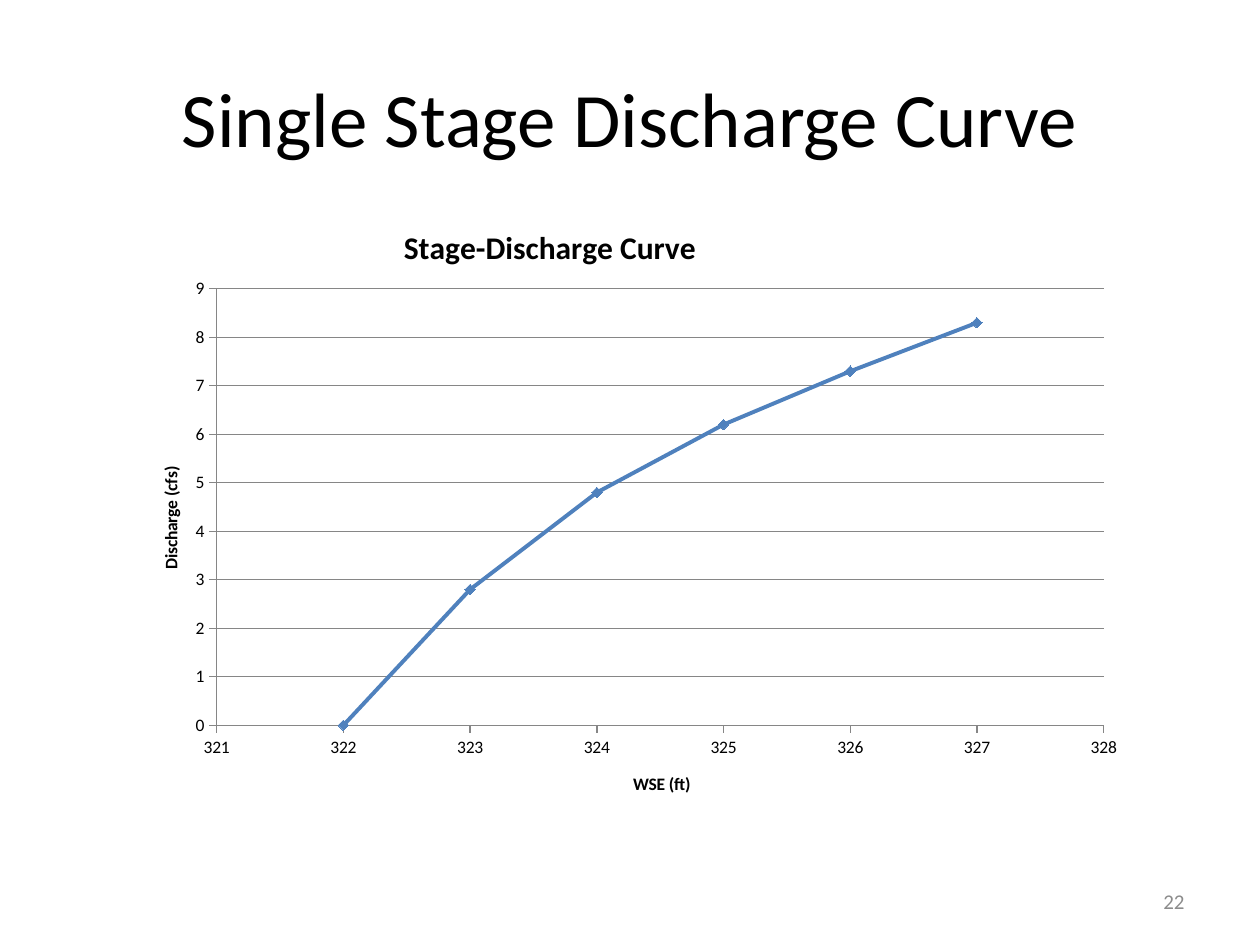
import pptx
import pptx.chart.data
import pptx.dml.color
import pptx.enum.chart
import pptx.enum.text
import pptx.oxml
import pptx.oxml.ns
import pptx.util

FONT = "Calibri"
BLACK, GRAY, BLUE = "000000", "8C8C8C", "4F81BD"
GRID_GRAY = "868686"
WATER_LEVELS = range(322, 328)
DISCHARGES = [0, 2.8, 4.8, 6.2, 7.3, 8.3]


def color(code):
    return pptx.dml.color.RGBColor.from_string(code)


def style_font(font, size, code=BLACK, bold=False):
    font.name = FONT
    font.size = pptx.util.Pt(size)
    font.bold = bold
    font.color.rgb = color(code)


def style_line(line, code, width):
    line.color.rgb = color(code)
    line.width = pptx.util.Pt(width)


def add_text(page, place, text, size, code, align):
    box = page.shapes.add_textbox(*map(pptx.util.Inches, place))
    frame = box.text_frame
    frame.word_wrap = True
    frame.vertical_anchor = pptx.enum.text.MSO_ANCHOR.MIDDLE
    frame.text = text
    para = frame.paragraphs[0]
    para.alignment = align
    style_font(para.runs[0].font, size, code)


def set_layout(element, before, **shares):
    """Place a chart part by shares of the chart's size, ahead of the named child."""
    for old in element.findall(pptx.oxml.ns.qn("c:layout")):
        element.remove(old)
    target = '<c:layoutTarget val="inner"/>' if "w" in shares else ""
    modes = "".join(f'<c:{key}Mode val="edge"/>' for key in "xy")
    values = "".join(f'<c:{key} val="{share}"/>' for key, share in shares.items())
    layout = pptx.oxml.parse_xml(
        f'<c:layout {pptx.oxml.ns.nsdecls("c")}><c:manualLayout>'
        f"{target}{modes}{values}</c:manualLayout></c:layout>")
    element.find(pptx.oxml.ns.qn(before)).addprevious(layout)


def set_title(owner, text, size, x, y):
    """Title a chart or an axis at a share of the chart's size."""
    owner.has_title = True
    title = owner.chart_title if hasattr(owner, "chart_title") else owner.axis_title
    title.text_frame.text = text
    style_font(title.text_frame.paragraphs[0].runs[0].font, size, bold=True)
    element = title._element
    if element.find(pptx.oxml.ns.qn("c:overlay")) is None:
        element.get_or_add_layout()
        element.find(pptx.oxml.ns.qn("c:layout")).addnext(
            pptx.oxml.parse_xml(f'<c:overlay {pptx.oxml.ns.nsdecls("c")} val="0"/>'))
    set_layout(element, "c:overlay", x=x, y=y)


def style_axis(axis, low, high, gridlines):
    axis.minimum_scale, axis.maximum_scale = low, high
    axis.major_unit = 1
    axis.has_major_gridlines = gridlines
    if gridlines:
        style_line(axis.major_gridlines.format.line, GRID_GRAY, 0.75)
    axis.major_tick_mark = pptx.enum.chart.XL_TICK_MARK.OUTSIDE
    axis.minor_tick_mark = pptx.enum.chart.XL_TICK_MARK.NONE
    axis.tick_labels.number_format = "General"
    axis.tick_labels.number_format_is_linked = False
    style_font(axis.tick_labels.font, 10)
    style_line(axis.format.line, GRID_GRAY, 0.75)


def style_curve(curve):
    curve.smooth = True
    style_line(curve.format.line, BLUE, 2.25)
    marker = curve.marker
    marker.style = pptx.enum.chart.XL_MARKER_STYLE.DIAMOND
    marker.size = 6
    marker.format.fill.solid()
    marker.format.fill.fore_color.rgb = color(BLUE)
    style_line(marker.format.line, BLUE, 0.75)


def add_discharge_chart(page, place):
    data = pptx.chart.data.XyChartData()
    series = data.add_series("Series 1")
    for level, discharge in zip(WATER_LEVELS, DISCHARGES):
        series.add_data_point(level, discharge)
    chart = page.shapes.add_chart(
        pptx.enum.chart.XL_CHART_TYPE.XY_SCATTER_SMOOTH,
        *map(pptx.util.Inches, place), data).chart
    style_font(chart.font, 10)
    chart.has_legend = False
    chart.plots[0].vary_by_categories = False
    style_curve(chart.plots[0].series[0])
    style_axis(chart.category_axis, 321, 328, False)
    style_axis(chart.value_axis, 0, 9, True)
    set_title(chart, "Stage-Discharge Curve", 18, 0.27, 0.04)
    set_title(chart.category_axis, "WSE (ft)", 10, 0.5, 0.92)
    set_title(chart.value_axis, "Discharge (cfs)", 10, 0.03, 0.43)
    plot_area = chart._chartSpace.chart.plotArea
    set_layout(plot_area, "c:scatterChart", x=0.09, y=0.15, w=0.88, h=0.7)


def main():
    deck = pptx.Presentation()
    deck.slide_width = pptx.util.Inches(10)
    deck.slide_height = pptx.util.Inches(7.5)
    page = deck.slides.add_slide(deck.slide_layouts[6])
    align = pptx.enum.text.PP_ALIGN
    add_text(page, (0.5, 0.3, 9, 1.25), "Single Stage Discharge Curve", 44, BLACK, align.CENTER)
    add_text(page, (7.17, 6.95, 2.33, 0.4), "22", 12, GRAY, align.RIGHT)
    add_discharge_chart(page, (1, 1.55, 8, 4.95))
    deck.save("out.pptx")


if __name__ == "__main__":
    main()
